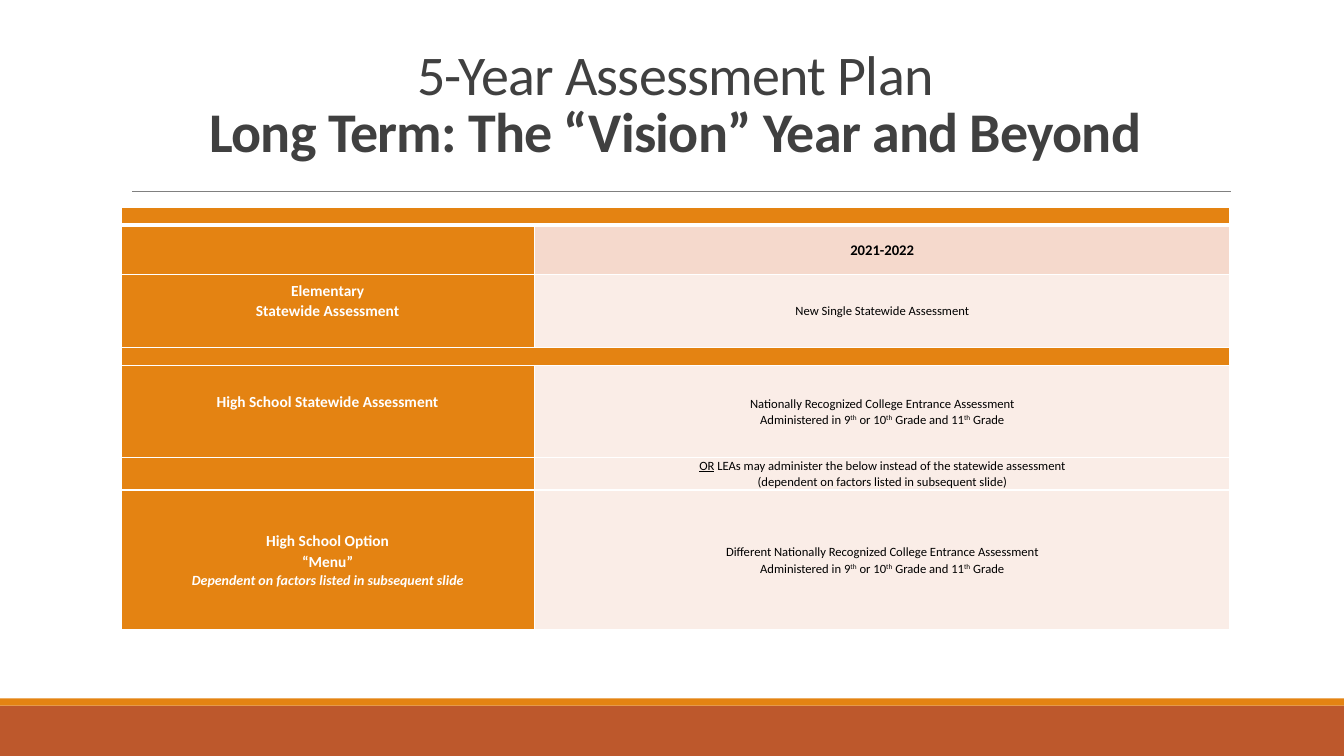
from typing import NamedTuple

from lxml.etree import SubElement
from pptx import Presentation
from pptx.dml.color import RGBColor
from pptx.enum.shapes import MSO_CONNECTOR, MSO_SHAPE
from pptx.enum.text import MSO_ANCHOR, PP_ALIGN
from pptx.oxml.ns import qn
from pptx.util import Inches, Pt

FONT = "Calibri"
ORANGE, RUST, WHITE, BLACK = "E48312", "BD582C", "FFFFFF", "000000"
PEACH, PALE = "F5D9CC", "FAEDE7"
LABEL_LINE = 0.2  # height of one label line, inches


class Span(NamedTuple):
    text: str
    size: float = 9
    color: str = BLACK
    bold: bool = False
    italic: bool = False
    underline: bool = False
    raised: bool = False


class Content(NamedTuple):
    fill: str
    lines: list[list[Span]] = []
    bottom: float = 0


class Row(NamedTuple):
    height: float
    cells: list[Content]


class Bar(NamedTuple):
    top: float
    height: float
    color: str


def rgb(value: str) -> RGBColor:
    return RGBColor.from_string(value)


def label(text: str, size: float = 11, italic: bool = False) -> list[Span]:
    return [Span(text, size, WHITE, bold=True, italic=italic)]


def draw_bar(page, bar: Bar) -> None:
    shape = page.shapes.add_shape(MSO_SHAPE.RECTANGLE, 0, Inches(bar.top),
                                  Inches(13.33), Inches(bar.height))
    shape.shadow.inherit = False
    shape.fill.solid()
    shape.fill.fore_color.rgb = rgb(bar.color)
    shape.line.fill.background()


def draw_rule(page) -> None:
    rule = page.shapes.add_connector(MSO_CONNECTOR.STRAIGHT, Inches(1.31), Inches(1.9),
                                     Inches(12.21), Inches(1.9))
    rule.line.color.rgb = rgb("808080")
    rule.line.width = Pt(0.5)
    SubElement(rule._element.spPr, qn("a:effectLst"))


def draw_title(page) -> None:
    box = page.shapes.add_textbox(Inches(1.2), Inches(0.09), Inches(11), Inches(1.59))
    frame = box.text_frame
    frame.word_wrap = True
    frame.vertical_anchor = MSO_ANCHOR.BOTTOM
    para = frame.paragraphs[0]
    para.text = "5-Year Assessment Plan\vLong Term: The “Vision” Year and Beyond"
    para.alignment = PP_ALIGN.CENTER
    para.line_spacing = 0.85
    for run in para.runs:
        run.font.name = FONT
        run.font.size = Pt(40)
        run.font.color.rgb = rgb("404040")
        run._r.get_or_add_rPr().set("spc", "-50")
    para.runs[1].font.bold = True


def add_span(para, span: Span) -> None:
    run = para.add_run()
    run.text = span.text
    run.font.name = FONT
    run.font.size = Pt(span.size)
    run.font.color.rgb = rgb(span.color)
    run.font.bold = span.bold
    run.font.italic = span.italic
    run.font.underline = span.underline
    if span.raised:
        run._r.get_or_add_rPr().set("baseline", "30000")


def set_borders(cell, top: float, bottom: float) -> None:
    properties = cell._tc.get_or_add_tcPr()
    for side, points in (("L", 1), ("R", 1), ("T", top), ("B", bottom)):
        border = SubElement(properties, qn(f"a:ln{side}"), w=str(Pt(points)))
        fill = SubElement(border, qn("a:solidFill"))
        SubElement(fill, qn("a:srgbClr"), val=WHITE)


def fill_cell(cell, content: Content) -> None:
    cell.fill.solid()
    cell.fill.fore_color.rgb = rgb(content.fill)
    cell.vertical_anchor = MSO_ANCHOR.MIDDLE
    cell.margin_left = cell.margin_right = Inches(0.06)
    cell.margin_top, cell.margin_bottom = 0, Inches(content.bottom)
    frame = cell.text_frame
    if not content.lines:
        # A small end mark keeps empty rows from growing
        SubElement(frame.paragraphs[0]._p, qn("a:endParaRPr"), sz="600")
    for index, spans in enumerate(content.lines):
        para = frame.add_paragraph() if index else frame.paragraphs[0]
        para.alignment = PP_ALIGN.CENTER
        para.line_spacing = 1.07
        for span in spans:
            add_span(para, span)


def draw_plan(page, rows: list[Row]) -> None:
    frame = page.shapes.add_table(len(rows), 2, Inches(1.2), Inches(2.06), Inches(11),
                                  Inches(sum(row.height for row in rows)))
    table = frame.table
    for column, width in zip(table.columns, (4.1, 6.9)):
        column.width = Inches(width)
    for index, row in enumerate(rows):
        table.rows[index].height = Inches(row.height)
        for column in range(2):
            set_borders(table.cell(index, column), 3 if index == 1 else 1,
                        3 if index == 0 else 1)
        if len(row.cells) == 1:
            table.cell(index, 0).merge(table.cell(index, 1))
        for column, content in enumerate(row.cells):
            fill_cell(table.cell(index, column), content)


BAND = Content(ORANGE)
GRADES = [Span("Administered in 9"), Span("th", raised=True), Span(" or 10"),
          Span("th", raised=True), Span(" Grade and 11"), Span("th", raised=True),
          Span(" Grade")]
ROWS = [
    Row(0.17, [BAND]),
    Row(0.49, [BAND, Content(PEACH, [[Span("2021-2022", 10.5, bold=True)]])]),
    Row(0.73, [
        Content(ORANGE, [label("Elementary"), label("Statewide Assessment")], LABEL_LINE),
        Content(PALE, [[Span("New Single Statewide Assessment")]])]),
    Row(0.18, [BAND]),
    Row(0.91, [
        Content(ORANGE, [label("High School Statewide Assessment")], LABEL_LINE),
        Content(PALE, [[Span("Nationally Recognized College Entrance Assessment")], GRADES])]),
    Row(0.31, [BAND, Content(PALE, [
        [Span("OR", underline=True),
         Span(" LEAs may administer the below instead of the statewide assessment")],
        [Span("(dependent on factors listed in subsequent slide)")]])]),
    Row(1.39, [
        Content(ORANGE, [label("High School Option"), label("“Menu”"),
                         label("Dependent on factors listed in subsequent slide", 10, True)]),
        Content(PALE, [[Span("Different Nationally Recognized College Entrance Assessment")],
                       GRADES])]),
]


def main() -> None:
    deck = Presentation()
    deck.slide_width, deck.slide_height = Inches(13.33), Inches(7.5)
    page = deck.slides.add_slide(deck.slide_layouts[6])

    # Footer bars and title rule
    for bar in (Bar(7, 0.5, RUST), Bar(6.93, 0.07, ORANGE)):
        draw_bar(page, bar)
    draw_rule(page)

    # Title and assessment table
    draw_title(page)
    draw_plan(page, ROWS)
    deck.save("out.pptx")


if __name__ == "__main__":
    main()
